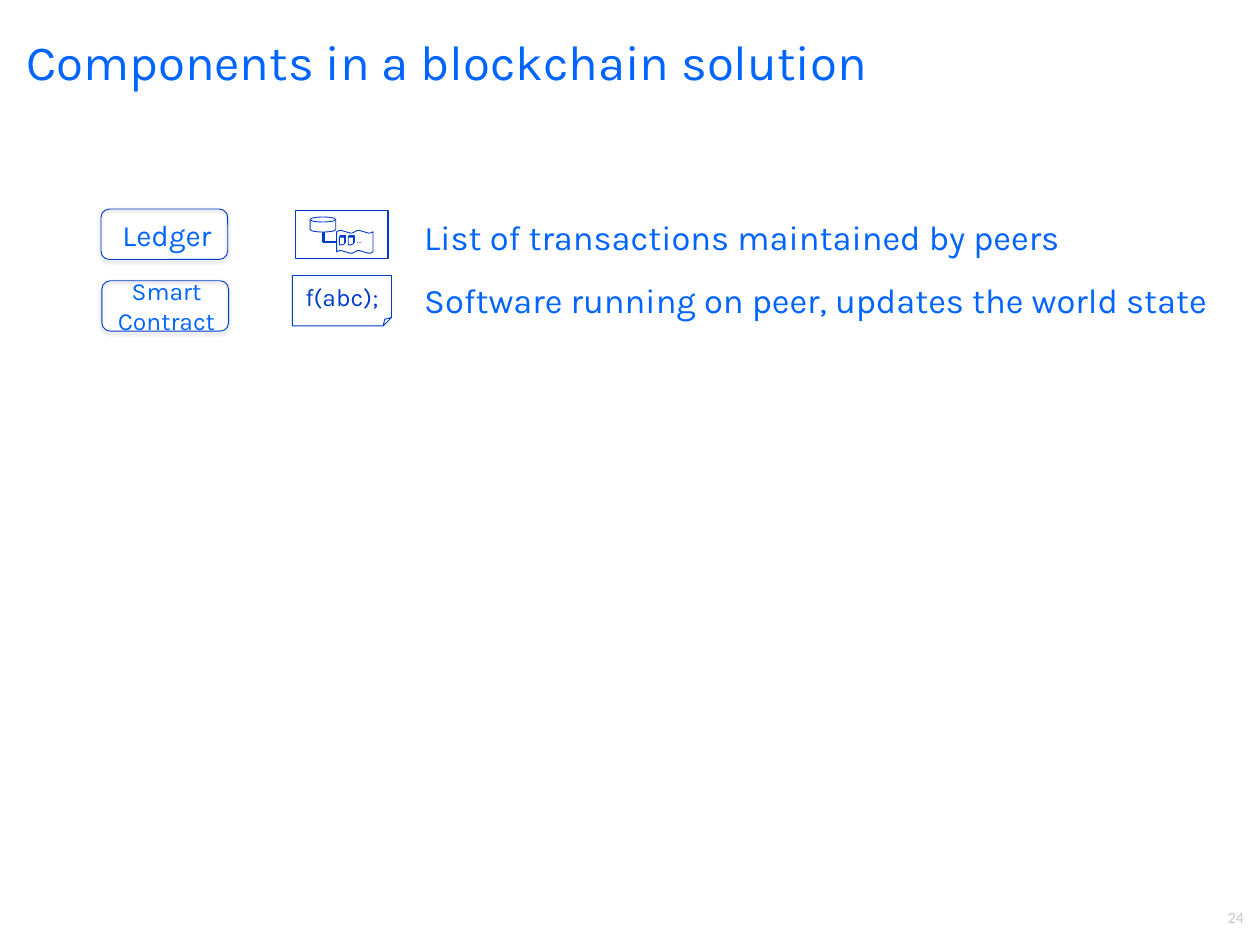
"""Build the slide that lists the components in a blockchain solution."""
import pptx
import pptx.dml.color
import pptx.enum.shapes
import pptx.enum.text
import pptx.oxml
import pptx.oxml.ns
import pptx.util

Pt = pptx.util.Pt
color = pptx.dml.color.RGBColor.from_string
SHAPE = pptx.enum.shapes.MSO_SHAPE
ALIGN = pptx.enum.text.PP_ALIGN
BRIGHT = "0064FF"
DARK = "003BC9"
WHITE = "FFFFFF"


def draw(shapes, kind, bounds, fill=None, width=0.75):
    shape = shapes.add_shape(kind, *map(Pt, bounds))
    shape.shadow.inherit = False
    if fill:
        shape.fill.solid()
        shape.fill.fore_color.rgb = color(fill)
    else:
        shape.fill.background()
    shape.line.color.rgb = color(DARK)
    shape.line.width = Pt(width)
    return shape


def write(box, text, size, text_color=BRIGHT, align=ALIGN.LEFT, font="Karla"):
    frame = box.text_frame
    frame.word_wrap = True
    frame.text = text
    for para in frame.paragraphs:
        para.alignment = align
        para.font.name = font
        para.font.size = Pt(size)
        para.font.color.rgb = color(text_color)


deck = pptx.Presentation()
deck.slide_width, deck.slide_height = Pt(1024), Pt(768)
page = deck.slides.add_slide(deck.slide_layouts[6])
shapes = page.shapes

number = shapes.add_textbox(Pt(959), Pt(734.4), Pt(59), Pt(23))
write(number, "24", 12.8, "C6C6C6", ALIGN.RIGHT, "Calibri")

title = shapes.add_textbox(Pt(14.4), Pt(21.6), Pt(870), Pt(151))
write(title, "Components in a blockchain solution", 40)

components = [
    ("Ledger", 24, (82.1, 169.9), (84.2, 172.8, 103, 36),
     "List of transactions maintained by peers", 172.1),
    ("Smart\nContract", 20, (82.8, 228.2), (57.6, 221, 155.5, 55.4),
     "Software running on peer, updates the world state", 223.2),
]
for name, size, corner, name_bounds, description, top in components:
    badge = shapes.add_group_shape().shapes
    frame_shape = draw(badge, SHAPE.ROUNDED_RECTANGLE, (*corner, 103, 41))
    effects = frame_shape._element.spPr.find(pptx.oxml.ns.qn("a:effectLst"))
    effects.append(pptx.oxml.parse_xml(
        f'<a:outerShdw {pptx.oxml.ns.nsdecls("a")} blurRad="{Pt(3.1)}" '
        f'dist="{Pt(1.8)}" dir="5400000" rotWithShape="0">'
        '<a:srgbClr val="000000"><a:alpha val="35000"/></a:srgbClr>'
        '</a:outerShdw>'))
    label = badge.add_textbox(*map(Pt, name_bounds))
    write(label, name, size, align=ALIGN.CENTER)
    box = shapes.add_textbox(Pt(337.7), Pt(top), Pt(658), Pt(41))
    write(box, description, 28)

code_note = draw(shapes, SHAPE.FOLDED_CORNER, (237.6, 223.9, 80.6, 41))
code_note.text_frame.vertical_anchor = pptx.enum.text.MSO_ANCHOR.MIDDLE
write(code_note, "f(abc);", 20, DARK, ALIGN.CENTER)

ledger_icon = shapes.add_group_shape().shapes
draw(ledger_icon, SHAPE.RECTANGLE, (240.5, 171.4, 74.9, 38.9), WHITE, 1)
draw(ledger_icon, SHAPE.DOUBLE_WAVE, (273.6, 187.2, 29.5, 18.7), WHITE)
for left in (283, 275.8):
    draw(ledger_icon, SHAPE.FLOWCHART_MULTIDOCUMENT, (left, 191.5, 5, 7.9))
ellipsis = ledger_icon.add_textbox(Pt(283), Pt(187.2), Pt(26.6), Pt(15.8))
write(ellipsis, "…", 7.1, DARK)

link = ledger_icon.add_connector(
    pptx.enum.shapes.MSO_CONNECTOR.ELBOW,
    Pt(273.6), Pt(196.6), Pt(262.8), Pt(188.6))
link.line.color.rgb = color(DARK)
link.line.width = Pt(2)
properties = link._element.spPr
properties.find(pptx.oxml.ns.qn("a:prstGeom")).set("prst", "bentConnector2")
properties.append(pptx.oxml.parse_xml(
    f'<a:effectLst {pptx.oxml.ns.nsdecls("a")}/>'))
draw(ledger_icon, SHAPE.FLOWCHART_MAGNETIC_DISK,
     (252, 176.4, 20.9, 12.2), WHITE)

deck.save("out.pptx")
